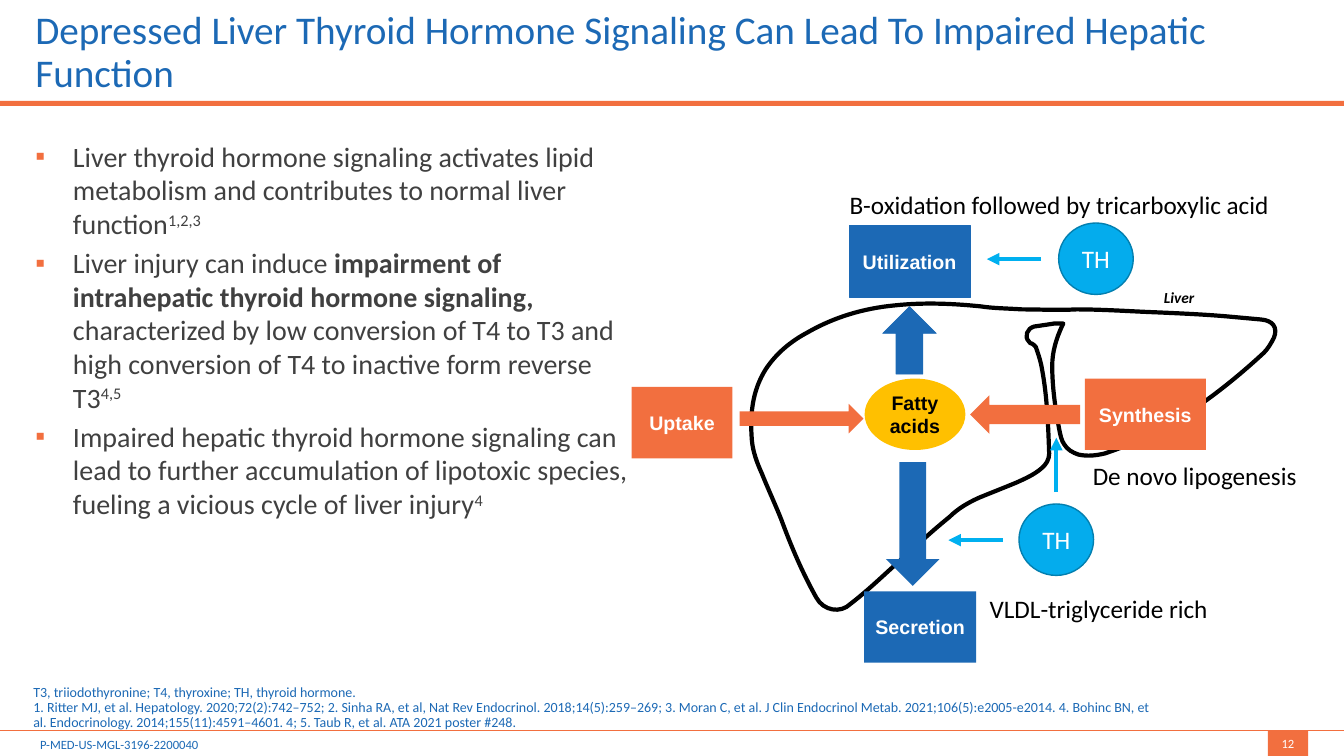
from lxml import etree
from pptx import Presentation
from pptx import util as u
from pptx.dml.color import RGBColor
from pptx.enum import shapes, text
from pptx.oxml import ns

BLUE = RGBColor(0x1C, 0x69, 0xB5)
ORANGE = RGBColor(0xF2, 0x6F, 0x3F)
GOLD = RGBColor(0xFF, 0xC0, 0x00)
CYAN = RGBColor(0x04, 0xAC, 0xED)
RIM = RGBColor(0x03, 0x7F, 0xAF)
SKY = RGBColor(0x00, 0xB0, 0xF0)
GREY = RGBColor(0x40, 0x40, 0x40)
BLACK = RGBColor(0, 0, 0)
WHITE = RGBColor(0xFF, 0xFF, 0xFF)

KIND = shapes.MSO_SHAPE
ALIGN = text.PP_ALIGN
ANCHOR = text.MSO_ANCHOR

LIVER = [
    (1055, 321),
    (1052, 321), (1049, 321), (1046, 321), (1040, 322), (1033, 323), (1026, 324),
    (1019, 326), (1016, 334), (1021, 339), (1021, 340), (1023, 341), (1024, 341),
    (1027, 343), (1029, 345), (1029, 348), (1031, 354), (1033, 360), (1034, 367),
    (1039, 394), (1040, 422), (1041, 450), (1041, 456), (1038, 461), (1033, 465),
    (1026, 471), (1017, 475), (1008, 479), (996, 484), (983, 489), (971, 494),
    (960, 499), (950, 505), (942, 513), (921, 530), (901, 549), (881, 567),
    (869, 578), (857, 589), (844, 599), (834, 609), (817, 606), (810, 593),
    (796, 568), (785, 542), (775, 515), (769, 500), (762, 485), (756, 470),
    (751, 459), (747, 448), (746, 437), (744, 412), (746, 388), (760, 366),
    (770, 351), (784, 339), (801, 330), (827, 315), (856, 306), (888, 303),
    (916, 300), (944, 301), (973, 304), (986, 306), (1000, 306), (1014, 307),
    (1032, 307), (1050, 308), (1068, 307), (1095, 307), (1122, 309), (1149, 310),
    (1172, 311), (1195, 312), (1218, 314), (1229, 315), (1240, 316), (1251, 317),
    (1263, 318), (1268, 325), (1264, 335), (1261, 341), (1258, 346), (1254, 350),
    (1227, 375), (1197, 399), (1164, 419), (1143, 432), (1120, 442), (1096, 450),
    (1087, 452), (1079, 453), (1070, 451), (1064, 449), (1059, 446), (1056, 441),
    (1053, 437), (1052, 431), (1051, 426), (1047, 405), (1044, 384), (1044, 363),
    (1044, 349), (1048, 336), (1054, 323), (1054, 322), (1055, 322), (1055, 321),
]


class Deck:
    """Holds the style and the current slide and draws each kind of element."""

    def __init__(self):
        self.show = Presentation()
        self.show.slide_width, self.show.slide_height = u.Cm(33.87), u.Cm(19.05)
        self.slide = self.show.slides.add_slide(self.show.slide_layouts[6])
        self.items = self.slide.shapes

    def run(self, para, words, size, color, font="Calibri", bold=False, italic=False, raised=False):
        run = para.add_run()
        run.text = words
        face = run.font
        face.name, face.size, face.bold, face.italic = font, u.Pt(size), bold, italic
        face.color.rgb = color
        if raised:
            face._element.set("baseline", "30000")

    def box(self, at, inset=(0.25, 0.13), wrap=True, anchor=ANCHOR.TOP):
        frame = self.items.add_textbox(*map(u.Cm, at)).text_frame
        frame.word_wrap, frame.vertical_anchor = wrap, anchor
        frame.margin_left = frame.margin_right = u.Cm(inset[0])
        frame.margin_top = frame.margin_bottom = u.Cm(inset[1])
        return frame

    def label(self, at, words, size=18, color=BLACK, **style):
        self.run(self.box(at, wrap=False).paragraphs[0], words, size, color, **style)

    def block(self, at, lines, size, inset, anchor):
        para = self.box(at, inset, anchor=anchor).paragraphs[0]
        para.line_spacing = 0.9
        for i, line in enumerate(lines):
            if i:
                para.add_line_break()
            self.run(para, line, size, BLUE)

    def bullets(self, at, paras):
        frame = self.box(at, (0, 0))
        for i, parts in enumerate(paras):
            para = frame.add_paragraph() if i else frame.paragraphs[0]
            props = para._p.get_or_add_pPr()
            props.set("marL", str(u.Cm(0.95)))
            props.set("indent", str(-u.Cm(0.95)))
            tint = etree.SubElement(props, ns.qn("a:buClr"))
            etree.SubElement(tint, ns.qn("a:srgbClr"), val=str(ORANGE))
            etree.SubElement(props, ns.qn("a:buFont"), typeface="Arial")
            etree.SubElement(props, ns.qn("a:buChar"), char="▪")
            if i:
                para.space_before = u.Pt(4)
            for words, style in parts:
                self.run(para, words, 20, GREY, **style)

    def shape(self, kind, at, fill, turn=0, rim=None, width=0.5, words="", size=14,
              color=WHITE, font="Arial", bold=True):
        item = self.items.add_shape(kind, *map(u.Cm, at))
        item.shadow.inherit = False
        item.rotation = turn
        item.fill.solid()
        item.fill.fore_color.rgb = fill
        if rim is None:
            item.line.fill.background()
        else:
            item.line.color.rgb, item.line.width = rim, u.Pt(width)
        if words:
            frame = item.text_frame
            frame.word_wrap, frame.vertical_anchor = True, ANCHOR.MIDDLE
            frame.margin_left = frame.margin_right = 0
            frame.margin_top = frame.margin_bottom = 0
            frame.paragraphs[0].alignment = ALIGN.CENTER
            self.run(frame.paragraphs[0], words, size, color, font, bold)

    def line(self, ends, color, width, head=False):
        item = self.items.add_connector(shapes.MSO_CONNECTOR.STRAIGHT, *map(u.Cm, ends))
        item.line.color.rgb, item.line.width = color, u.Pt(width)
        if head:
            etree.SubElement(item.line._get_or_add_ln(), ns.qn("a:tailEnd"), type="triangle")
        etree.SubElement(item._element.spPr, ns.qn("a:effectLst"))

    def outline(self, knots, color, width):
        ends = knots[::3]
        left, top = (min(axis) for axis in zip(*ends))
        pen = self.items.build_freeform(*ends[0], scale=u.Cm(2.54) / 100)
        pen.add_line_segments(ends[1:], close=True)
        item = pen.convert_to_shape()
        legs = list(item._element.iter(ns.qn("a:lnTo")))
        for i, leg in enumerate(legs):
            curve = etree.Element(ns.qn("a:cubicBezTo"))
            for x, y in knots[3 * i + 1:3 * i + 4]:
                etree.SubElement(curve, ns.qn("a:pt"), x=str(x - left), y=str(y - top))
            leg.getparent().replace(leg, curve)
        item.shadow.inherit = False
        item.fill.background()
        item.line.color.rgb, item.line.width = color, u.Pt(width)


def main():
    deck = Deck()
    deck.shape(KIND.RECTANGLE, (31.95, 18.42, 1.02, 0.63), ORANGE, words="12", size=9,
               font="Calibri", bold=False)
    deck.shape(KIND.RECTANGLE, (0, 2.54, 33.87, 0.13), ORANGE)
    deck.line((0, 18.41, 33.87, 18.41), ORANGE, 1)
    deck.label((0.76, 18.44, 4.52, 0.63), "P-MED-US-MGL-3196-2200040", 9, BLUE)
    deck.block((0.89, 0, 30.15, 2.54), [
        "Depressed Liver Thyroid Hormone Signaling Can Lead To Impaired Hepatic Function",
    ], 28, (0, 0.13), ANCHOR.BOTTOM)
    deck.bullets((0.89, 3.51, 15.2, 13.49), [
        [("Liver thyroid hormone signaling activates lipid metabolism and contributes to "
          "normal liver function", {}), ("1,2,3", {"raised": True})],
        [("Liver injury can induce ", {}),
         ("impairment of intrahepatic thyroid hormone signaling, ", {"bold": True}),
         ("characterized by low conversion of T4 to T3 and high conversion of T4 to "
          "inactive form reverse T3", {}), ("4,5", {"raised": True})],
        [("Impaired hepatic thyroid hormone signaling can lead to further accumulation of "
          "lipotoxic species, fueling a vicious cycle of liver injury", {}),
         ("4", {"raised": True})],
    ])
    deck.block((0.84, 17.27, 28.27, 1.14), [
        "T3, triiodothyronine; T4, thyroxine; TH, thyroid hormone.",
        "1. Ritter MJ, et al. Hepatology. 2020;72(2):742–752; 2. Sinha RA, et al, Nat Rev "
        "Endocrinol. 2018;14(5):259–269; 3. Moran C, et al. J Clin Endocrinol Metab. "
        "2021;106(5):e2005-e2014. 4. Bohinc BN, et al. Endocrinology. "
        "2014;155(11):4591–4601. 4; 5. Taub R, et al. ATA 2021 poster #248.",
    ], 10, (0, 0), ANCHOR.BOTTOM)

    deck.outline(LIVER, BLACK, 3)
    for at, fill, turn, rim in [
        ((18.64, 10.18, 3.12, 0.74), ORANGE, 0, None),
        ((24.45, 9.96, 2.77, 0.97), ORANGE, 180, None),
        ((22.07, 7.9, 1.7, 1.35), BLUE, 270, BLUE),
        ((21.44, 12.53, 3.12, 1.35), BLUE, 90, None),
    ]:
        deck.shape(KIND.RIGHT_ARROW, at, fill, turn, rim)
    deck.shape(KIND.OVAL, (21.79, 9.54, 2.54, 1.8), GOLD, words="Fatty acids", color=BLACK)
    for words, left, top, width, fill, rim in [
        ("Uptake", 15.92, 9.75, 2.54, ORANGE, None),
        ("Secretion", 21.78, 14.9, 2.82, BLUE, None),
        ("Synthesis", 27.34, 9.54, 3.05, ORANGE, None),
        ("Utilization", 21.4, 5.69, 3.05, BLUE, BLUE),
    ]:
        deck.shape(KIND.RECTANGLE, (left, top, width, 1.8), fill, rim=rim, words=words)
    deck.label((29.08, 7.14, 2.21, 0.97), "Liver", 11, bold=True, italic=True)
    for words, left, top, width in [
        ("Β-oxidation followed by tricarboxylic acid", 21.16, 4.65, 11.2),
        ("De novo lipogenesis", 27.29, 11.46, 5.72),
        ("VLDL-triglyceride rich", 24.69, 14.83, 6.22),
    ]:
        deck.label((left, top, width, 1.02), words)
    for left, top in [(26.68, 5.62), (25.68, 12.7)]:
        deck.shape(KIND.OVAL, (left, top, 1.88, 1.8), CYAN, rim=RIM, width=1, words="TH",
                   size=18, font="Calibri", bold=False)
    for x, y, dx, dy in [(26.62, 12.4, 0, -1.37), (25.27, 13.61, -1.37, 0), (26.24, 6.53, -1.37, 0)]:
        deck.line((x, y, x + dx, y + dy), SKY, 3, head=True)
    deck.show.save("out.pptx")


if __name__ == "__main__":
    main()
